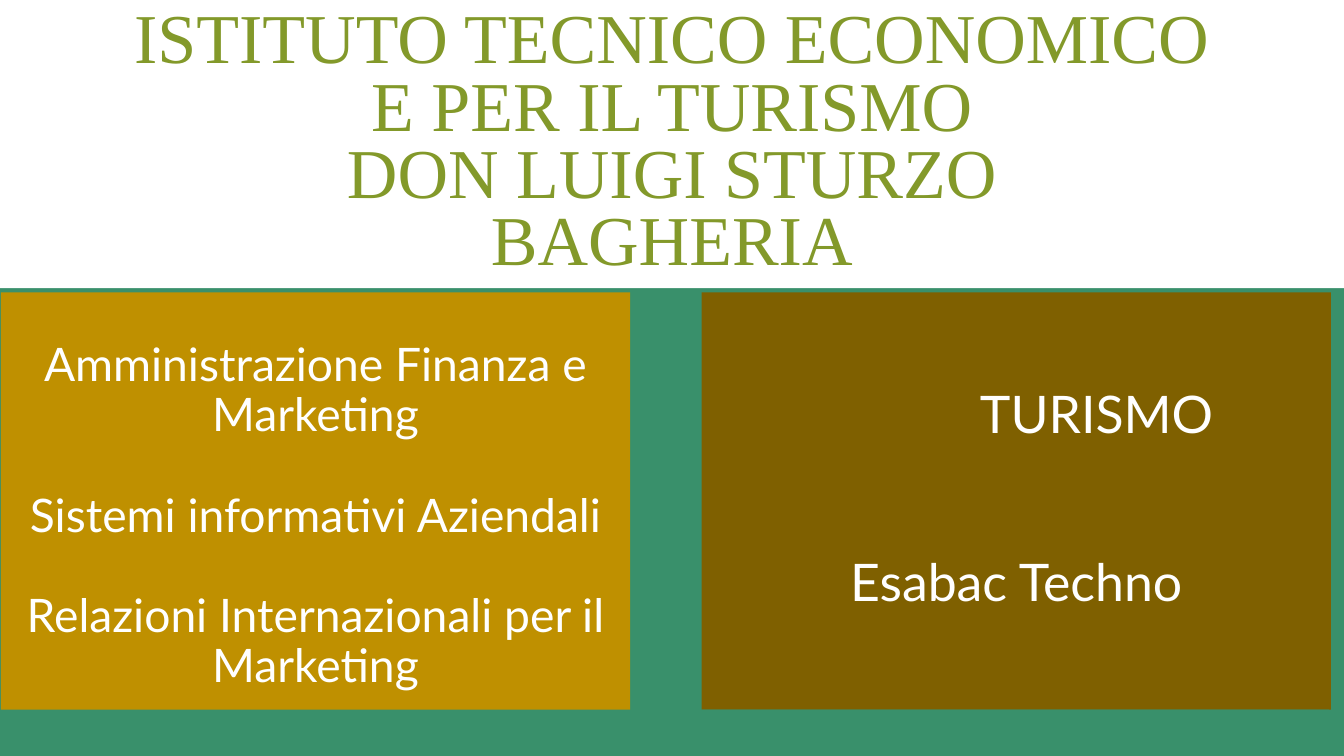
from dataclasses import dataclass

from lxml import etree
from pptx import Presentation, util as u
from pptx.dml.color import RGBColor
from pptx.enum import shapes, text
from pptx.oxml.ns import qn

CENTER, LEFT = text.PP_ALIGN.CENTER, text.PP_ALIGN.LEFT
TOP, MIDDLE = text.MSO_ANCHOR.TOP, text.MSO_ANCHOR.MIDDLE
GREEN, WHITE = "39906B", "FFFFFF"


@dataclass
class Line:
    text: str
    align: text.PP_ALIGN = CENTER
    before: float = 0  # points
    indent: float = 0  # inches


@dataclass
class Panel:
    holder: int
    box: tuple[float, float, float, float]
    fill: str
    font: str
    size: float
    color: str
    spacing: float
    inset: float
    anchor: text.MSO_ANCHOR
    lines: list[Line]


def paint(fill, color: str) -> None:
    fill.solid()
    fill.fore_color.rgb = RGBColor.from_string(color)


def apply(target, values: dict) -> None:
    for name, value in values.items():
        setattr(target, name, value)


def place(sp, box: tuple[float, float, float, float]) -> None:
    apply(sp, dict(zip(("left", "top", "width", "height"), map(u.Inches, box))))


def write_line(p, line: Line, panel: Panel) -> None:
    p.text = line.text
    apply(p, {"alignment": line.align, "line_spacing": panel.spacing,
              "space_before": u.Pt(line.before), "space_after": u.Pt(0)})
    for r in p.runs:
        apply(r.font, {"name": panel.font, "size": u.Pt(panel.size)})
        paint(r.font.fill, panel.color)
    # Plain paragraph: no bullet, only its own indent
    pPr = p._p.get_or_add_pPr()
    pPr.set("marL", str(u.Inches(line.indent)))
    pPr.set("indent", "0")
    etree.SubElement(pPr, qn("a:buNone"))


def draw_panel(s, panel: Panel) -> None:
    sp = s.placeholders[panel.holder]
    place(sp, panel.box)
    paint(sp.fill, panel.fill)
    tf = sp.text_frame
    margins = ("margin_left", "margin_top", "margin_right", "margin_bottom")
    apply(tf, dict.fromkeys(margins, u.Inches(panel.inset)))
    apply(tf, {"word_wrap": True, "auto_size": text.MSO_AUTO_SIZE.NONE,
               "vertical_anchor": panel.anchor})
    for i, line in enumerate(panel.lines):
        write_line(tf.add_paragraph() if i else tf.paragraphs[0], line, panel)


PANELS = [
    Panel(0, (0, 0, 13.33, 2.86), WHITE, "Times New Roman", 50, "83992A", 0.8, 0.1, TOP,
          [Line("ISTITUTO TECNICO ECONOMICO\vE PER IL TURISMO\v"
                "DON LUIGI STURZO\vBAGHERIA")]),
    Panel(1, (0.01, 2.9, 6.24, 4.46), "BF9000", "Lato", 33, WHITE, 0.9, 0.06, MIDDLE,
          [Line("Amministrazione Finanza e Marketing"),
           Line("Sistemi informativi Aziendali", before=36),
           Line("Relazioni Internazionali per il Marketing", before=36)]),
    Panel(2, (6.96, 2.9, 6.24, 4.14), "7F6000", "Lato", 37, WHITE, 0.9, 0.06, MIDDLE,
          [Line("TURISMO", LEFT, indent=2.7),
           Line("Esabac Techno", before=80)]),
]


def main() -> None:
    prs = Presentation()
    prs.slide_width, prs.slide_height = u.Inches(13.33), u.Inches(7.5)
    s = prs.slides.add_slide(prs.slide_layouts[3])
    paint(s.background.fill, GREEN)

    # Title and the two course panels
    for panel in PANELS:
        draw_panel(s, panel)

    # Bottom band, over the foot of the left panel
    band = s.shapes.add_shape(shapes.MSO_SHAPE.RECTANGLE, 0, 0, 0, 0)
    place(band, (0, 7.04, 13.18, 0.46))
    paint(band.fill, GREEN)
    band.line.fill.background()
    band.shadow.inherit = False

    prs.save("out.pptx")


if __name__ == "__main__":
    main()
